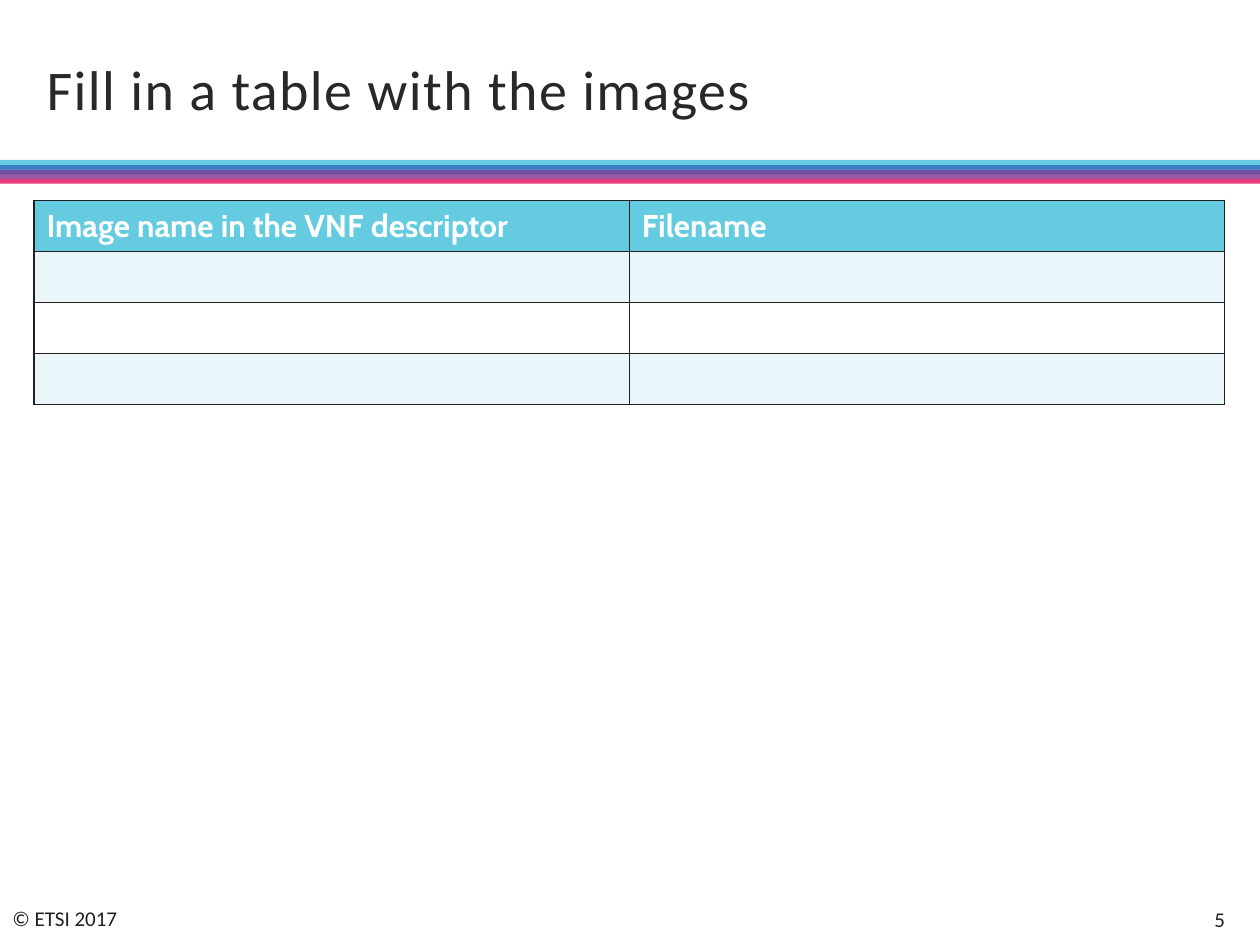
from lxml.etree import fromstring
from pptx import Presentation
from pptx.dml.color import RGBColor
from pptx.enum.shapes import MSO_SHAPE
from pptx.enum.text import MSO_ANCHOR, PP_ALIGN
from pptx.util import Inches, Pt

WHITE = RGBColor(0xFF, 0xFF, 0xFF)
INK = RGBColor(0x20, 0x20, 0x20)
GREY = RGBColor(0x28, 0x28, 0x28)
CYAN = RGBColor(0x64, 0xCB, 0xE1)
BLUE = RGBColor(0x39, 0x7E, 0xC1)
VIOLET = RGBColor(0x70, 0x4F, 0xA0)
PURPLE = RGBColor(0x9B, 0x59, 0xA4)
PINK = RGBColor(0xE8, 0x3A, 0x7A)
PALE = RGBColor(0xEA, 0xF6, 0xF9)

STRIPES = [CYAN, BLUE, VIOLET, PURPLE, PINK]
HEADS = ["Image name in the VNF descriptor", "Filename"]
ROWS = 4
NS = "http://schemas.openxmlformats.org/drawingml/2006/main"


def style(font, color, **values):
    font.color.rgb = color
    for name, value in values.items():
        setattr(font, name, value)


def place(shape, left, top, width, height):
    box = {"left": left, "top": top, "width": width, "height": height}
    for name, value in box.items():
        setattr(shape, name, Inches(value))


def add_title(slide, text):
    title = slide.shapes.title
    place(title, 0.27, 0.3, 7.41, 0.87)
    frame = title.text_frame
    frame.text = text
    frame.vertical_anchor = MSO_ANCHOR.MIDDLE
    line = frame.paragraphs[0]
    line.alignment = PP_ALIGN.LEFT
    line.line_spacing = 0.9
    run = line.runs[0]
    style(run.font, GREY, name="Calibri", size=Pt(32))
    run.font._element.set("spc", "80")


def add_stripes(slide, top, step):
    """Stack the stripes from the bottom up, each overlapping the next."""
    for row, color in reversed(list(enumerate(STRIPES))):
        bar = slide.shapes.add_shape(
            MSO_SHAPE.RECTANGLE, 0, Inches(top + row * step),
            Inches(10), Inches(0.04))
        bar.shadow.inherit = False
        bar.fill.solid()
        bar.fill.fore_color.rgb = color
        bar.line.fill.background()


def add_note(slide, text, box, align, anchor):
    note = slide.shapes.add_textbox(*map(Inches, box))
    frame = note.text_frame
    frame.word_wrap = True
    frame.vertical_anchor = anchor
    line = frame.paragraphs[0]
    line.text = text
    line.alignment = align
    style(line.runs[0].font, INK, name="Calibri", size=Pt(12))


def paint(cell, color):
    """Give a cell thin borders on all sides and a solid fill."""
    props = cell._tc.get_or_add_tcPr()
    for side in "LRTB":
        props.append(fromstring(
            f'<a:ln{side} xmlns:a="{NS}" w="{Pt(1)}"><a:solidFill>'
            f'<a:srgbClr val="{INK}"/></a:solidFill></a:ln{side}>'))
    cell.fill.solid()
    cell.fill.fore_color.rgb = color


def add_grid(slide):
    box = map(Inches, (0.27, 1.59, 9.45, 1.62))
    table = slide.shapes.add_table(ROWS, len(HEADS), *box).table
    for row in range(ROWS):
        color = CYAN if row == 0 else PALE if row % 2 else WHITE
        for col in range(len(HEADS)):
            paint(table.cell(row, col), color)
    for col, text in enumerate(HEADS):
        line = table.cell(0, col).text_frame.paragraphs[0]
        line.text = text
        style(line.runs[0].font, WHITE, name="Cabin", size=Pt(18), bold=True)


def main():
    deck = Presentation()
    deck.slide_width, deck.slide_height = Inches(10), Inches(7.5)
    slide = deck.slides.add_slide(deck.slide_layouts[5])
    add_stripes(slide, 1.27, 0.037)
    add_title(slide, "Fill in a table with the images")
    add_note(slide, "© ETSI 2017", (0, 7.14, 1.11, 0.3),
             PP_ALIGN.LEFT, MSO_ANCHOR.TOP)
    add_note(slide, "5", (9.29, 7.1, 0.53, 0.39),
             PP_ALIGN.RIGHT, MSO_ANCHOR.MIDDLE)
    add_grid(slide)
    deck.save("out.pptx")


if __name__ == "__main__":
    main()
